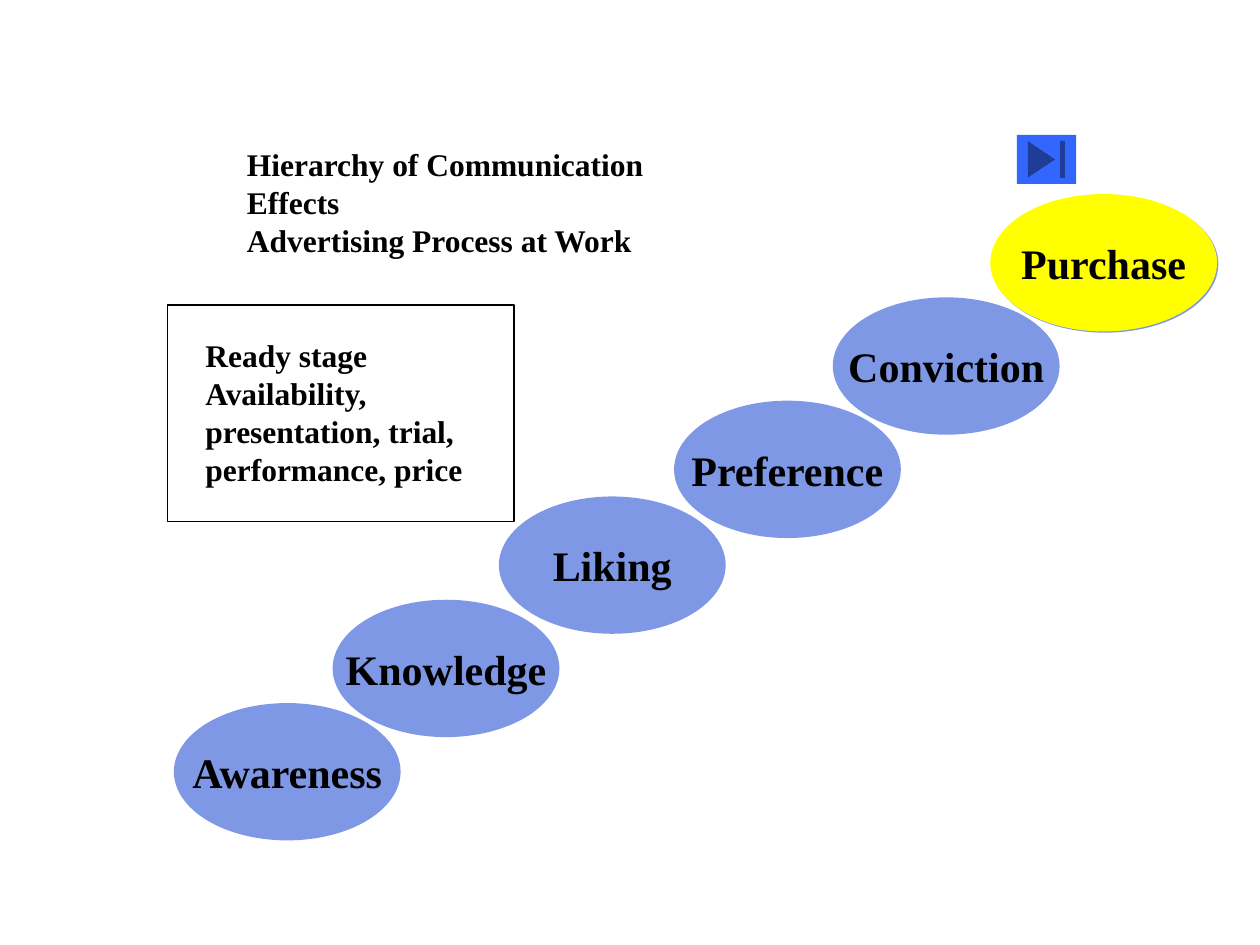
from lxml import etree
from pptx import Presentation
from pptx.dml.color import RGBColor
from pptx.enum import shapes, text
from pptx.oxml import ns
from pptx.util import Inches, Pt

BLACK = RGBColor(0x00, 0x00, 0x00)
WHITE = RGBColor(0xFF, 0xFF, 0xFF)
BLUE = RGBColor(0x00, 0x33, 0xCC)
YELLOW = RGBColor(0xFF, 0xFF, 0x00)
BUTTON_BLUE = RGBColor(0x33, 0x66, 0xFF)


def write(box, *lines, size=18, align=text.PP_ALIGN.LEFT,
          anchor=text.MSO_ANCHOR.TOP, wrap=True, inset=(0.1, 0.05)):
    """Fill a shape with bold black paragraphs; inset is (sides, top and bottom)."""
    frame = box.text_frame
    frame.word_wrap = wrap
    frame.auto_size = text.MSO_AUTO_SIZE.NONE
    frame.vertical_anchor = anchor
    frame.margin_left = frame.margin_right = Inches(inset[0])
    frame.margin_top = frame.margin_bottom = Inches(inset[1])
    frame.text = "\n".join(lines)
    for para in frame.paragraphs:
        para.alignment = align
        para.line_spacing = 1.0
        para.space_before = Pt(0)
        for span in para.runs:
            span.font.name = "Times New Roman"
            span.font.size = Pt(size)
            span.font.bold = True
            span.font.color.rgb = BLACK


def add_filled(kind, left, top, width, height, color, opacity=100):
    shape = page.shapes.add_shape(
        kind, Inches(left), Inches(top), Inches(width), Inches(height))
    shape.shadow.inherit = False
    shape.fill.solid()
    shape.fill.fore_color.rgb = color
    shape.line.fill.background()
    if opacity < 100:
        color_node = shape.fill._xPr.find(".//" + ns.qn("a:srgbClr"))
        etree.SubElement(color_node, ns.qn("a:alpha"), val=str(opacity * 1000))
    return shape


deck = Presentation()
deck.slide_width = Inches(10)
deck.slide_height = Inches(7.5)
page = deck.slides.add_slide(deck.slide_layouts[5])

title = page.shapes.title
title.left, title.top = Inches(1.86), Inches(1.1)
title.width, title.height = Inches(3.96), Inches(1)
write(title, "Hierarchy of Communication Effects", "Advertising Process at Work")

# Steps climb from lower left to upper right; the last one is highlighted.
stages = [
    ("Purchase", 7.87, 1.55, BLUE, 50),
    ("Awareness", 1.38, 5.58, BLUE, 50),
    ("Knowledge", 2.64, 4.76, BLUE, 50),
    ("Liking", 3.96, 3.94, BLUE, 50),
    ("Preference", 5.35, 3.18, BLUE, 50),
    ("Conviction", 6.61, 2.36, BLUE, 50),
    ("Purchase", 7.86, 1.54, YELLOW, 100),
]
for name, left, top, color, opacity in stages:
    stage = add_filled(shapes.MSO_SHAPE.OVAL, left, top, 1.8, 1.09, color, opacity)
    write(stage, name, size=24, align=text.PP_ALIGN.CENTER,
          anchor=text.MSO_ANCHOR.MIDDLE, wrap=False)

ready_box = add_filled(shapes.MSO_SHAPE.RECTANGLE, 1.33, 2.42, 2.75, 1.72, WHITE)
ready_box.line.color.rgb = BLACK
ready_box.line.width = Pt(0.75)
write(ready_box, "Ready stage",
      "Availability, presentation, trial, performance, price", inset=(0.3, 0.25))

add_filled(shapes.MSO_SHAPE.ACTION_BUTTON_END, 8.07, 1.07, 0.47, 0.39, BUTTON_BLUE)

deck.save("out.pptx")
